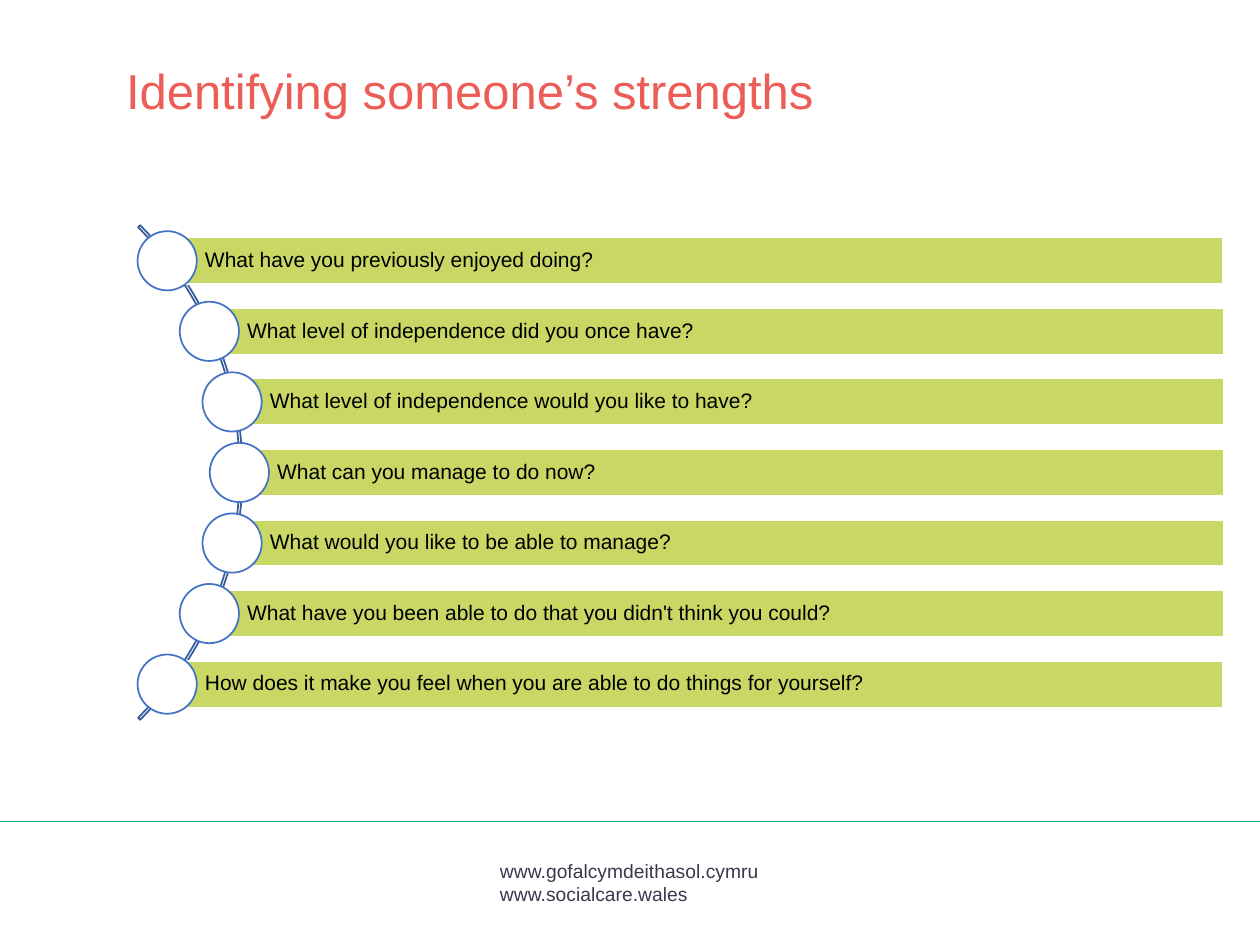
from math import sqrt

from lxml import etree
from pptx import Presentation
from pptx.dml.color import RGBColor
from pptx.enum.shapes import MSO_CONNECTOR, MSO_SHAPE
from pptx.enum.text import MSO_ANCHOR, PP_ALIGN
from pptx.oxml.ns import qn
from pptx.util import Inches, Pt

RECTANGLE, CIRCLE, ARC = MSO_SHAPE.RECTANGLE, MSO_SHAPE.OVAL, MSO_SHAPE.BLOCK_ARC
STRAIGHT = MSO_CONNECTOR.STRAIGHT
LEFT, TOP, MIDDLE = PP_ALIGN.LEFT, MSO_ANCHOR.TOP, MSO_ANCHOR.MIDDLE

TITLE = "Identifying someone’s strengths"
QUESTIONS = [
    "What have you previously enjoyed doing?",
    "What level of independence did you once have?",
    "What level of independence would you like to have?",
    "What can you manage to do now?",
    "What would you like to be able to manage?",
    "What have you been able to do that you didn't think you could?",
    "How does it make you feel when you are able to do things for yourself?",
]
WEBSITES = ["www.gofalcymdeithasol.cymru", "www.socialcare.wales"]

FONT = "Arial"
CORAL, LIME, TEAL, SLATE = "EB5E57", "C9D765", "16AD85", "37394C"
WHITE, BLACK, BLUE, NAVY = "FFFFFF", "000000", "4472C4", "365B9D"

ARC_X, ARC_Y, ARC_SIZE = -0.85, 3.75, 5.55
NODE_RADIUS, NODE_SIZE = 2.75, 0.47
ROW_PITCH, BAR_HEIGHT, BAR_RIGHT = 0.56, 0.37, 9.71


def rgb(value):
    return RGBColor.from_string(value)


def style_text(frame, size, color, spacing=None):
    for paragraph in frame.paragraphs:
        paragraph.alignment = LEFT
        paragraph.line_spacing = spacing
        for run in paragraph.runs:
            run.font.name = FONT
            run.font.size = Pt(size)
            run.font.color.rgb = rgb(color)


def add_outlined(slide, kind, box, fill, line):
    shape = slide.shapes.add_shape(kind, *map(Inches, box))
    shape.shadow.inherit = False
    if fill:
        shape.fill.solid()
        shape.fill.fore_color.rgb = rgb(fill)
    else:
        shape.fill.background()
    shape.line.color.rgb = rgb(line)
    shape.line.width = Pt(1)
    return shape


def add_question(slide, question, offset):
    center_x = ARC_X + sqrt(NODE_RADIUS**2 - offset**2)
    center_y = ARC_Y + offset
    bar_box = (center_x, center_y - BAR_HEIGHT / 2, BAR_RIGHT - center_x, BAR_HEIGHT)
    bar = add_outlined(slide, RECTANGLE, bar_box, LIME, WHITE)
    frame = bar.text_frame
    frame.text = question
    frame.word_wrap = True
    frame.vertical_anchor = MIDDLE
    frame.margin_left = Inches(0.3)
    frame.margin_top = frame.margin_right = frame.margin_bottom = Inches(0.03)
    style_text(frame, 12, BLACK, 0.9)
    node_box = (center_x - NODE_SIZE / 2, center_y - NODE_SIZE / 2, NODE_SIZE, NODE_SIZE)
    add_outlined(slide, CIRCLE, node_box, WHITE, BLUE)


def add_footer(slide):
    websites = slide.shapes.add_textbox(*map(Inches, (3.87, 6.77, 2.26, 0.46)))
    websites.text_frame.text = "\n".join(WEBSITES)
    style_text(websites.text_frame, 11, SLATE)
    rule = slide.shapes.add_connector(STRAIGHT, *map(Inches, (0, 6.52, 10, 6.52)))
    rule.line.color.rgb = rgb(TEAL)
    rule.line.width = Pt(1)
    etree.SubElement(rule._element.spPr, qn("a:effectLst"))


def add_title(slide):
    title = slide.shapes.title
    title.left, title.top, title.width, title.height = map(Inches, (0.9, 0.48, 8.45, 0.94))
    title.text_frame.text = TITLE
    title.text_frame.vertical_anchor = TOP
    style_text(title.text_frame, 28, CORAL, 0.9)


def main():
    """Build the slide of strength-finding questions along an arc."""
    deck = Presentation()
    deck.slide_width, deck.slide_height = Inches(10), Inches(7.5)
    slide = deck.slides.add_slide(deck.slide_layouts[5])
    add_footer(slide)
    add_title(slide)
    arc_box = (ARC_X - ARC_SIZE / 2, ARC_Y - ARC_SIZE / 2, ARC_SIZE, ARC_SIZE)
    arc = add_outlined(slide, ARC, arc_box, None, NAVY)
    for index, value in enumerate((189, 27, 0.004)):
        arc.adjustments[index] = value
    middle = (len(QUESTIONS) - 1) / 2
    for row, question in enumerate(QUESTIONS):
        add_question(slide, question, (row - middle) * ROW_PITCH)
    deck.save("out.pptx")


if __name__ == "__main__":
    main()
